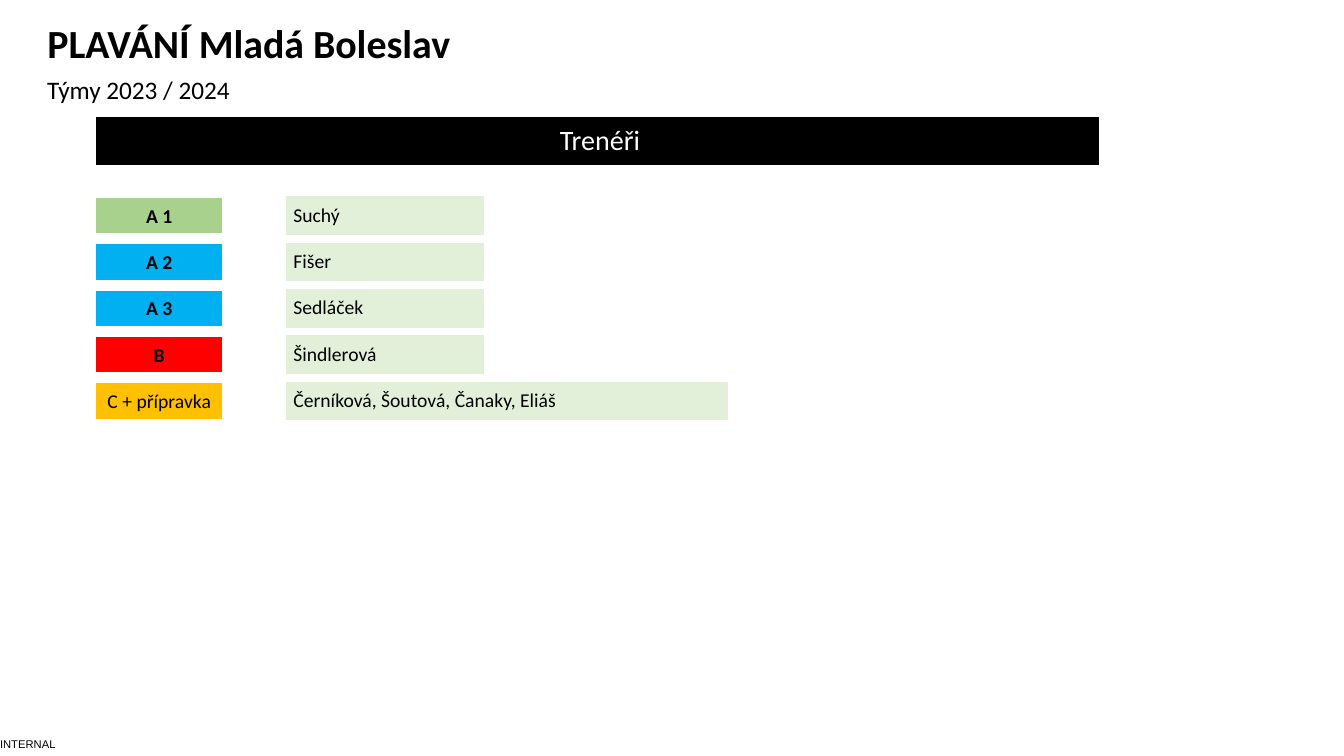
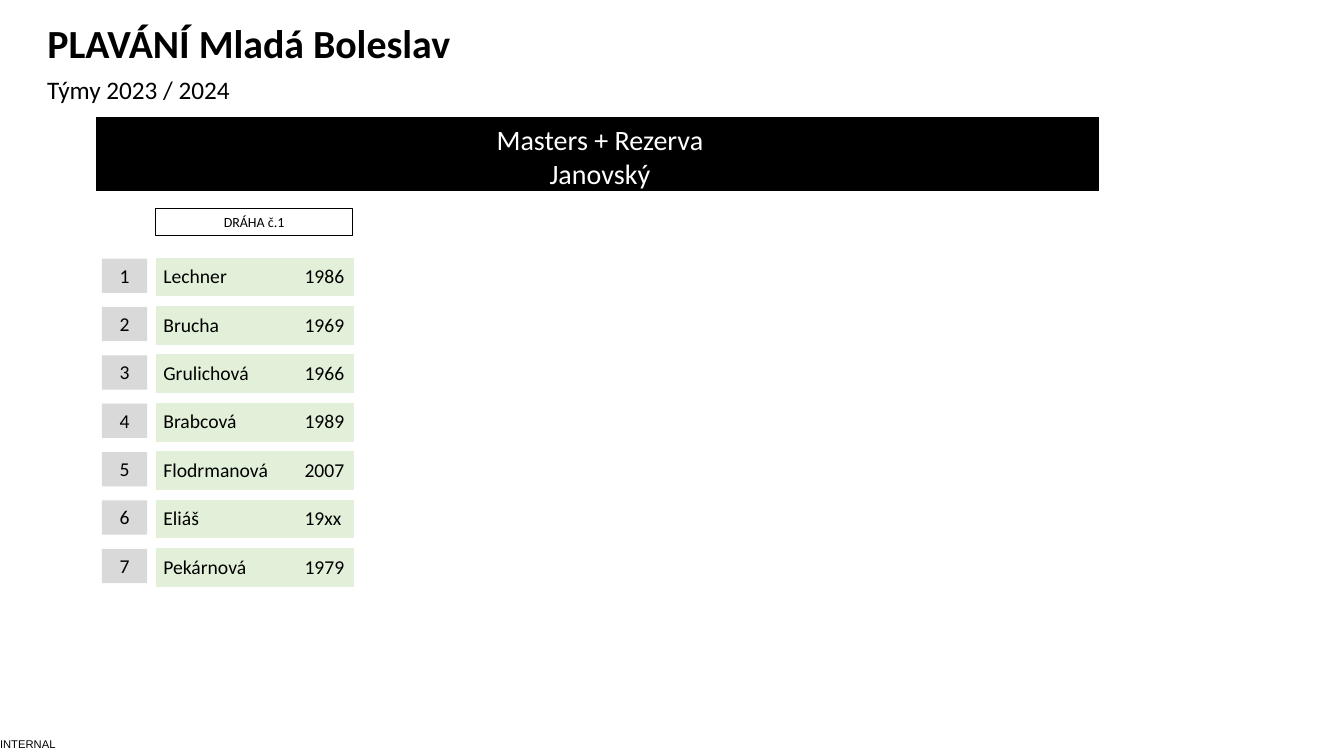
from lxml import etree
from pptx import Presentation
from pptx.dml.color import RGBColor
from pptx.enum.shapes import MSO_SHAPE
from pptx.enum.text import MSO_ANCHOR, MSO_AUTO_SIZE, PP_ALIGN
from pptx.oxml.ns import qn
from pptx.util import Inches, Pt

RECT = MSO_SHAPE.RECTANGLE
TOP, MIDDLE, BOTTOM = MSO_ANCHOR.TOP, MSO_ANCHOR.MIDDLE, MSO_ANCHOR.BOTTOM
LEFT, CENTER = PP_ALIGN.LEFT, PP_ALIGN.CENTER
NO_FIT = MSO_AUTO_SIZE.NONE

BLACK, WHITE, GREY = "000000", "FFFFFF", "D9D9D9"
GREEN, PALE_GREEN, BLUE, RED, AMBER = "A9D18E", "E2F0D9", "00B0F0", "FF0000", "FFC000"

TITLE = "PLAVÁNÍ Mladá Boleslav"
SUBTITLE = "Týmy 2023 / 2024"
FOOTER = "INTERNAL"

COACHES = [
    ("A 1", GREEN, True, "Suchý", 1.98),
    ("A 2", BLUE, True, "Fišer", 1.98),
    ("A 3", BLUE, True, "Sedláček", 1.98),
    ("B", RED, True, "Šindlerová", 1.98),
    ("C + přípravka", AMBER, False, "Černíková, Šoutová, Čanaky, Eliáš", 4.4),
]
LANE = "DRÁHA č.1"
SWIMMERS = [
    ("Lechner", "1986"),
    ("Brucha", "1969"),
    ("Grulichová", "1966"),
    ("Brabcová", "1989"),
    ("Flodrmanová", "2007"),
    ("Eliáš", "19xx"),
    ("Pekárnová", "1979"),
]
ROW_HEIGHT, LABEL_HEIGHT, LABEL_DROP = 0.41, 0.34, 0.03
COACH_TOP, COACH_PITCH = 1.94, 0.46
SWIMMER_TOP, SWIMMER_PITCH = 2.55, 0.48
YEAR_TAB = 1.4


def rgb(color):
    return RGBColor.from_string(color)


def box(x, y, w, h):
    return Inches(x), Inches(y), Inches(w), Inches(h)


def write(p, text, size, color=BLACK, bold=False, align=LEFT, font="Calibri"):
    p.alignment = align
    r = p.add_run()
    r.text = text
    r.font.name, r.font.size, r.font.bold = font, Pt(size), bold
    r.font.color.rgb = rgb(color)


def set_frame(tf, anchor, side, edge):
    tf.word_wrap = True
    tf.auto_size = NO_FIT
    tf.vertical_anchor = anchor
    tf.margin_left = tf.margin_right = Inches(side)
    tf.margin_top = tf.margin_bottom = Inches(edge)


def add_label(s, place, text, fill=None, line=None, size=14, bold=False):
    sp = s.shapes.add_shape(RECT, *box(*place))
    sp.shadow.inherit = False
    if fill:
        sp.fill.solid()
        sp.fill.fore_color.rgb = rgb(fill)
    else:
        sp.fill.background()
    if line:
        sp.line.color.rgb = rgb(line)
        sp.line.width = Pt(0.75)
    else:
        sp.line.fill.background()
    set_frame(sp.text_frame, TOP, 0.05, 0.05)
    write(sp.text_frame.paragraphs[0], text, size, bold=bold, align=CENTER)


def add_borders(cell):
    props = cell._tc.get_or_add_tcPr()
    for i, (side, width) in enumerate((("L", 1), ("R", 1), ("T", 1), ("B", 3))):
        ln = etree.Element(qn(f"a:ln{side}"), w=str(Pt(width)))
        fill = etree.SubElement(ln, qn("a:solidFill"))
        etree.SubElement(fill, qn("a:srgbClr"), val=WHITE)
        props.insert(i, ln)


def add_cell(s, place, lines, fill=PALE_GREEN, size=14, color=BLACK, align=LEFT, tab=None):
    table = s.shapes.add_table(1, 1, *box(*place)).table
    table.first_row = table.horz_banding = False
    cell = table.cell(0, 0)
    cell.margin_left = cell.margin_top = Inches(0.08)
    cell.margin_right, cell.margin_bottom = Inches(0.04), 0
    cell.fill.solid()
    cell.fill.fore_color.rgb = rgb(fill)
    add_borders(cell)
    tf = cell.text_frame
    for i, line in enumerate(lines):
        p = tf.add_paragraph() if i else tf.paragraphs[0]
        if tab:
            tabs = etree.SubElement(p._p.get_or_add_pPr(), qn("a:tabLst"))
            etree.SubElement(tabs, qn("a:tab"), pos=str(Inches(tab)), algn="l")
        write(p, line, size, color, align=align)


def add_footer(s):
    sp = s.shapes.add_textbox(*box(0, 7.26, 0.81, 0.24))
    set_frame(sp.text_frame, MIDDLE, 0, 0)
    write(sp.text_frame.paragraphs[0], FOOTER, 8, font="Arial")
    s.slide_layout.shapes.element.append(sp.element)


def add_slide(prs, band_lines, band_height):
    s = prs.slides.add_slide(prs.slide_layouts[5])
    title = s.shapes.title
    title.left, title.top, title.width, title.height = box(0.37, 0.23, 10.94, 0.47)
    set_frame(title.text_frame, BOTTOM, 0.1, 0.05)
    p = title.text_frame.paragraphs[0]
    p.line_spacing = 0.7
    write(p, TITLE, 28.5, bold=True)
    subtitle = s.shapes.add_textbox(*box(0.37, 0.69, 10.94, 0.39))
    set_frame(subtitle.text_frame, MIDDLE, 0.1, 0.05)
    write(subtitle.text_frame.paragraphs[0], SUBTITLE, 18)
    add_cell(s, (0.95, 1.15, 9.96, band_height), band_lines, BLACK, 20, WHITE, CENTER)
    return s


def build_coaches(prs):
    s = add_slide(prs, ["Trenéři"], 0.51)
    add_footer(s)
    for i, (team, color, bold, names, width) in enumerate(COACHES):
        y = COACH_TOP + i * COACH_PITCH
        add_label(s, (0.96, y + LABEL_DROP, 1.24, LABEL_HEIGHT), team, color, color, bold=bold)
        add_cell(s, (2.83, y, width, ROW_HEIGHT), [names])


def build_masters(prs):
    s = add_slide(prs, ["Masters + Rezerva", "Janovský"], 0.75)
    add_label(s, (1.54, 2.07, 1.96, 0.27), LANE, line=BLACK, size=10)
    for i, (name, year) in enumerate(SWIMMERS):
        y = SWIMMER_TOP + i * SWIMMER_PITCH
        add_label(s, (1.01, y + LABEL_DROP / 2, 0.45, LABEL_HEIGHT), str(i + 1), GREY)
        add_cell(s, (1.54, y, 1.98, ROW_HEIGHT), [f"{name}\t{year}"], tab=YEAR_TAB)


def main():
    prs = Presentation()
    prs.slide_width, prs.slide_height = Inches(13.33), Inches(7.5)
    build_coaches(prs)
    build_masters(prs)
    prs.save("out.pptx")


if __name__ == "__main__":
    main()
